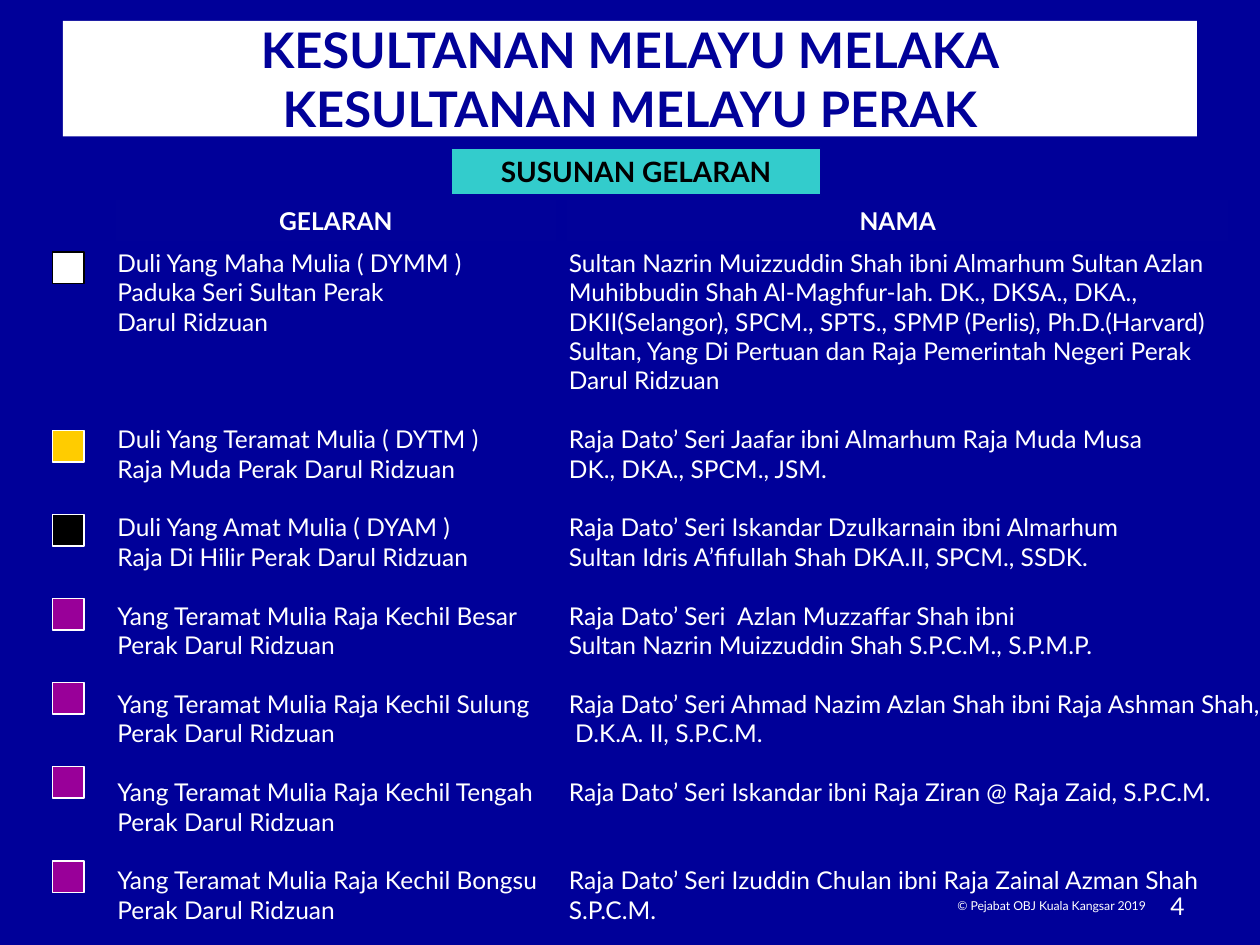
from pptx import Presentation
from pptx.dml.color import RGBColor
from pptx.enum.shapes import MSO_SHAPE
from pptx.enum.text import MSO_ANCHOR, MSO_AUTO_SIZE, PP_ALIGN
from pptx.util import Pt

RECT = MSO_SHAPE.RECTANGLE
LEFT, MID, RIGHT = PP_ALIGN.LEFT, PP_ALIGN.CENTER, PP_ALIGN.RIGHT
TOP, CENTRE, BASE = MSO_ANCHOR.TOP, MSO_ANCHOR.MIDDLE, MSO_ANCHOR.BOTTOM
GROW = MSO_AUTO_SIZE.SHAPE_TO_FIT_TEXT
HEX = {"back": "000099", "navy": "010199", "white": "FFFFFF", "teal": "33CCCC",
       "black": "000000", "gold": "FFCC00", "plum": "990099"}
LINE = 16.8  # height of one 14 pt line

# Swatch colour, swatch top, lines of the title, lines of the name
ROWS = [
    ("white", 144,
     ["Duli Yang Maha Mulia ( DYMM )", "Paduka Seri Sultan Perak", "Darul Ridzuan"],
     ["Sultan Nazrin Muizzuddin Shah ibni Almarhum Sultan Azlan",
      "Muhibbudin Shah Al-Maghfur-lah. DK., DKSA., DKA.,",
      "DKII(Selangor), SPCM., SPTS., SPMP (Perlis), Ph.D.(Harvard)",
      "Sultan, Yang Di Pertuan dan Raja Pemerintah Negeri Perak",
      "Darul Ridzuan"]),
    ("gold", 246,
     ["Duli Yang Teramat Mulia ( DYTM )", "Raja Muda Perak Darul Ridzuan"],
     ["Raja Dato’ Seri Jaafar ibni Almarhum Raja Muda Musa",
      "DK., DKA., SPCM., JSM."]),
    ("black", 294,
     ["Duli Yang Amat Mulia ( DYAM )", "Raja Di Hilir Perak Darul Ridzuan"],
     ["Raja Dato’ Seri Iskandar Dzulkarnain ibni Almarhum",
      "Sultan Idris A’fifullah Shah DKA.II, SPCM., SSDK."]),
    ("plum", 342,
     ["Yang Teramat Mulia Raja Kechil Besar", "Perak Darul Ridzuan"],
     ["Raja Dato’ Seri  Azlan Muzzaffar Shah ibni",
      "Sultan Nazrin Muizzuddin Shah S.P.C.M., S.P.M.P."]),
    ("plum", 390,
     ["Yang Teramat Mulia Raja Kechil Sulung", "Perak Darul Ridzuan"],
     ["Raja Dato’ Seri Ahmad Nazim Azlan Shah ibni Raja Ashman Shah,",
      " D.K.A. II, S.P.C.M."]),
    ("plum", 438,
     ["Yang Teramat Mulia Raja Kechil Tengah", "Perak Darul Ridzuan"],
     ["Raja Dato’ Seri Iskandar ibni Raja Ziran @ Raja Zaid, S.P.C.M."]),
    ("plum", 492,
     ["Yang Teramat Mulia Raja Kechil Bongsu", "Perak Darul Ridzuan"],
     ["Raja Dato’ Seri Izuddin Chulan ibni Raja Zainal Azman Shah", "S.P.C.M."]),
]

deck = Presentation()
deck.slide_width, deck.slide_height = Pt(720), Pt(540)
slide = deck.slides.add_slide(deck.slide_layouts[6])
slide.background.fill.solid()
slide.background.fill.fore_color.rgb = RGBColor.from_string(HEX["back"])


def add_box(x, y, w, h, fill=None, line=None):
    area = Pt(x), Pt(y), Pt(w), Pt(h)
    if fill is None:
        return slide.shapes.add_textbox(*area)
    box = slide.shapes.add_shape(RECT, *area)
    box.shadow.inherit = False
    box.fill.solid()
    box.fill.fore_color.rgb = RGBColor.from_string(HEX[fill])
    if line:
        box.line.color.rgb = RGBColor.from_string(HEX[line])
        box.line.width = Pt(0.75)
    else:
        box.line.fill.background()
    return box


def write(box, items, size=14, ink="white", bold=False, align=LEFT,
          anchor=TOP, grow=True, wrap=True):
    """Fill a box with (text, space before) pairs."""
    frame = box.text_frame
    frame.word_wrap = wrap
    frame.vertical_anchor = anchor
    if grow:
        frame.auto_size = GROW
    for i, (text, gap) in enumerate(items):
        para = frame.add_paragraph() if i else frame.paragraphs[0]
        para.text = text
        para.alignment = align
        if gap:
            para.space_before = Pt(gap)
        font = para.font
        font.name, font.size, font.bold = "Lato", Pt(size), bold
        font.color.rgb = RGBColor.from_string(HEX[ink])


# Title and subtitle
write(add_box(36, 12, 648, 66, "white"),
      [("KESULTANAN MELAYU MELAKA\vKESULTANAN MELAYU PERAK", 0)],
      28, "navy", True, MID, CENTRE, grow=False)
write(add_box(258, 84.5, 211, 27, "teal", "navy"),
      [("SUSUNAN GELARAN", 0)], 16, "black", True, MID)

# Column heads
for text, x, w in [("GELARAN", 66, 252), ("NAMA", 324, 378)]:
    write(add_box(x, 114, w, 24, "navy"), [(text, 0)], bold=True, align=MID)

# Two text columns: each row is as tall as its longer side plus one line
for col, x, w, wrap in [(2, 60, 258, True), (3, 318, 423, False)]:
    items, gap = [], 0
    for row in ROWS:
        items += [(text, 0 if i else gap) for i, text in enumerate(row[col])]
        tall = max(len(row[2]), len(row[3])) + 1
        gap = round((tall - len(row[col])) * LINE, 2)
    write(add_box(x, 138, w, 397.5), items, wrap=wrap)

# Colour swatches
for tint, y, *_ in ROWS:
    add_box(30, y, 18, 18, tint, "black" if tint == "white" else "white")

# Footer
write(add_box(516, 492, 168, 37.5), [("4", 0)], align=RIGHT, anchor=BASE, grow=False)
write(add_box(540, 510, 124.5, 15.75), [("© Pejabat OBJ Kuala Kangsar 2019", 0)], 7)

deck.save("out.pptx")
